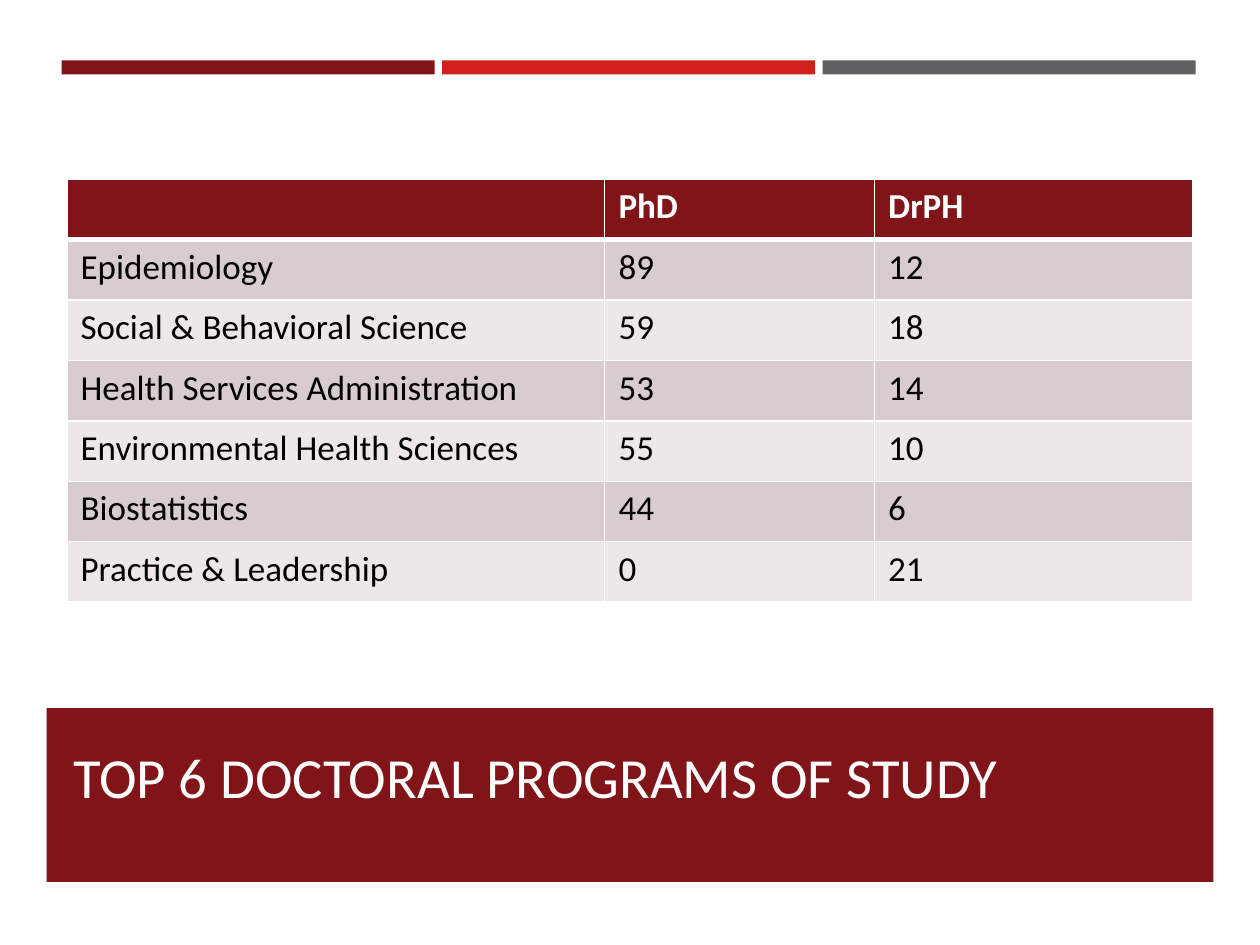
"""Build a slide with a table of doctoral programs above a title band."""
import dataclasses

import pptx
import pptx.dml.color
import pptx.enum.shapes
import pptx.enum.text
import pptx.oxml
import pptx.oxml.ns
import pptx.slide
import pptx.table
import pptx.text.text
import pptx.util

WIDE, HIGH = 10, 7.5
FONT = "Calibri"
HUES = {
    "wine": "811419",
    "red": "D0201C",
    "gray": "5F6062",
    "white": "FFFFFF",
    "title": "FFFEFF",
    "black": "000000",
    "dark": "D8CCCC",
    "light": "EDE7E8",
}
ROWS = [
    ("", "PhD", "DrPH"),
    ("Epidemiology", "89", "12"),
    ("Social & Behavioral Science", "59", "18"),
    ("Health Services Administration", "53", "14"),
    ("Environmental Health Sciences", "55", "10"),
    ("Biostatistics", "44", "6"),
    ("Practice & Leadership", "0", "21"),
]
COLS = (4.27, 2.14, 2.53)
ROW = 0.48


@dataclasses.dataclass
class Box:
    left: float
    top: float
    width: float
    height: float
    hue: str = "white"

    def place(self) -> tuple[int, ...]:
        sides = (self.left, self.top, self.width, self.height)
        return tuple(pptx.util.Inches(side) for side in sides)


BAR, GAP = 2.96, 0.06
BARS = [
    Box(0.49 + i * (BAR + GAP), 0.48, BAR, 0.12, hue)
    for i, hue in enumerate(("wine", "red", "gray"))
]
PAGE = Box(0, 0.59, WIDE, HIGH - 0.59)
BAND = Box(0.37, 5.62, WIDE - 2 * 0.37, 1.38, "wine")
HEAD = Box(0.48, 5.76, 9.05, 0.79)
GRID = Box(0.53, 1.42, sum(COLS), ROW * len(ROWS))


def tint(hue: str) -> pptx.dml.color.RGBColor:
    return pptx.dml.color.RGBColor.from_string(HUES[hue])


def write(frame: pptx.text.text.TextFrame, text: str, *, size: float,
          hue: str, bold: bool = False) -> None:
    para = frame.paragraphs[0]
    para.alignment = pptx.enum.text.PP_ALIGN.LEFT
    if text:
        run = para.add_run()
        run.text = text
        run.font.name = FONT
        run.font.size = pptx.util.Pt(size)
        run.font.bold = bold
        run.font.color.rgb = tint(hue)


def block(slide: pptx.slide.Slide, box: Box) -> None:
    kind = pptx.enum.shapes.MSO_SHAPE.RECTANGLE
    shape = slide.shapes.add_shape(kind, *box.place())
    shape.shadow.inherit = False
    shape.fill.solid()
    shape.fill.fore_color.rgb = tint(box.hue)
    shape.line.fill.background()


def edge(cell: pptx.table._Cell, top: float, bottom: float) -> None:
    props = cell._tc.get_or_add_tcPr()
    for side, width in (("L", 1), ("R", 1), ("T", top), ("B", bottom)):
        props.append(pptx.oxml.parse_xml(
            f'<a:ln{side} {pptx.oxml.ns.nsdecls("a")} w="{pptx.util.Pt(width)}">'
            f'<a:solidFill><a:srgbClr val="{HUES["white"]}"/></a:solidFill>'
            f'</a:ln{side}>'))


def fill(slide: pptx.slide.Slide) -> None:
    table = slide.shapes.add_table(len(ROWS), len(COLS), *GRID.place()).table
    for col, width in zip(table.columns, COLS):
        col.width = pptx.util.Inches(width)
    for r, texts in enumerate(ROWS):
        table.rows[r].height = pptx.util.Inches(ROW)
        first = r == 0
        back = "wine" if first else "dark" if r % 2 else "light"
        for c, text in enumerate(texts):
            cell = table.cell(r, c)
            cell.margin_left = cell.margin_right = pptx.util.Inches(0.11)
            edge(cell, 3 if r == 1 else 1, 3 if first else 1)
            cell.fill.solid()
            cell.fill.fore_color.rgb = tint(back)
            write(cell.text_frame, text, size=20, bold=first,
                  hue="white" if first else "black")


def name(slide: pptx.slide.Slide) -> None:
    title = slide.shapes.title
    title.left, title.top, title.width, title.height = HEAD.place()
    slide.shapes._spTree.append(title._element)
    frame = title.text_frame
    frame.word_wrap = True
    frame.auto_size = pptx.enum.text.MSO_AUTO_SIZE.NONE
    frame.vertical_anchor = pptx.enum.text.MSO_ANCHOR.MIDDLE
    write(frame, "TOP 6 DOCTORAL PROGRAMS OF STUDY", size=32.4, hue="title")


def main() -> None:
    deck = pptx.Presentation()
    deck.slide_width = pptx.util.Inches(WIDE)
    deck.slide_height = pptx.util.Inches(HIGH)
    slide = deck.slides.add_slide(deck.slide_layouts.get_by_name("Title Only"))
    for box in (*BARS, PAGE, BAND):
        block(slide, box)
    name(slide)
    fill(slide)
    deck.save("out.pptx")


if __name__ == "__main__":
    main()
